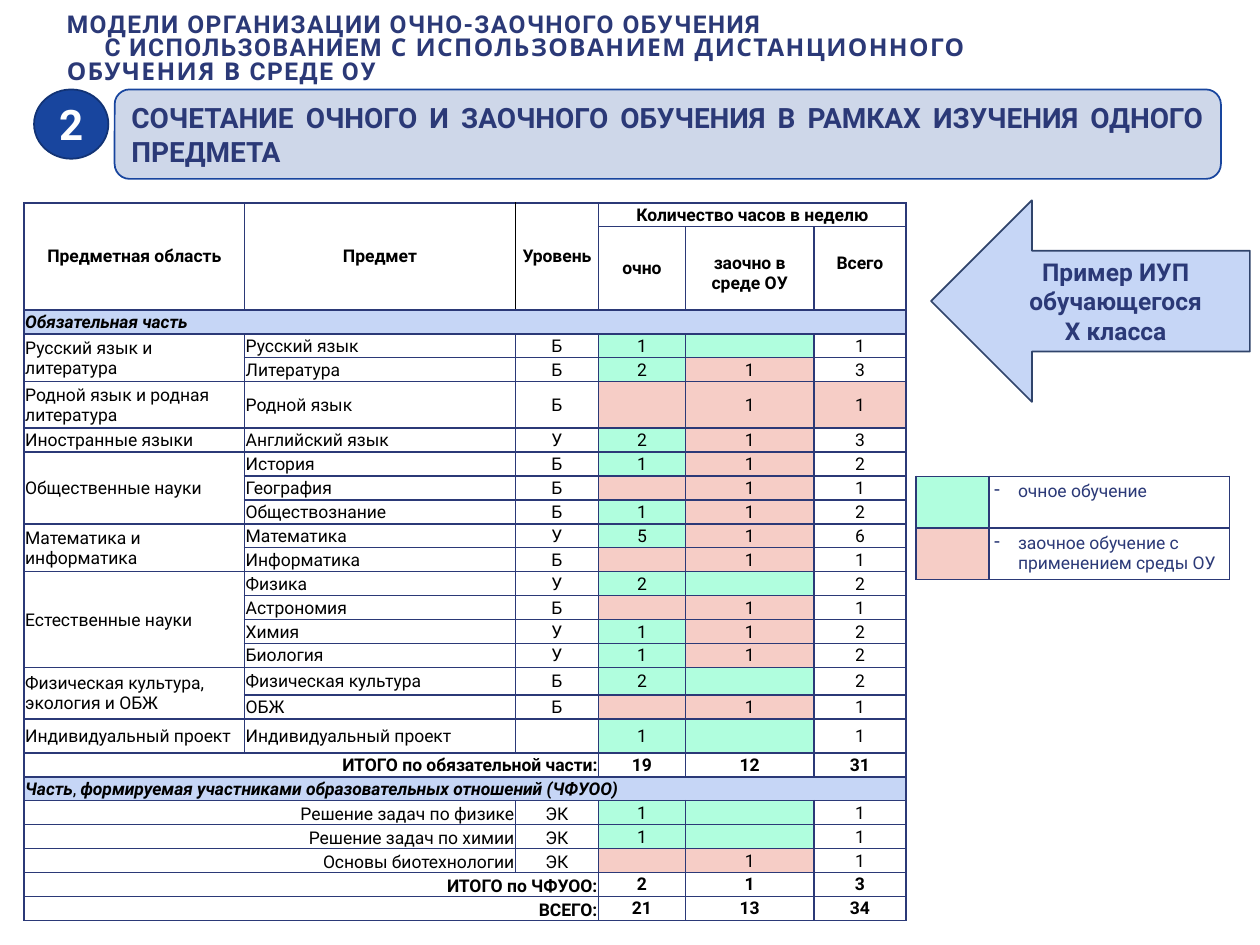
from lxml import etree
from pptx import Presentation
from pptx.dml.color import RGBColor
from pptx.enum.shapes import MSO_SHAPE
from pptx.enum.text import MSO_ANCHOR, PP_ALIGN
from pptx.oxml.ns import qn
from pptx.util import Inches, Pt

LEFT, CENTER, RIGHT = PP_ALIGN.LEFT, PP_ALIGN.CENTER, PP_ALIGN.RIGHT
JUSTIFY = PP_ALIGN.JUSTIFY
TOP, MIDDLE, BOTTOM = MSO_ANCHOR.TOP, MSO_ANCHOR.MIDDLE, MSO_ANCHOR.BOTTOM
NAVY, BLACK, WHITE = "2B3977", "000000", "FFFFFF"
IN_PERSON, DISTANCE, PALE_BLUE = "B0FEDE", "F6CDC6", "C6D6F6"
rgb = RGBColor.from_string


def style(frame, size, color, bold=True, italic=False, align=LEFT):
    for paragraph in frame.paragraphs:
        paragraph.alignment = align
        for run in paragraph.runs:
            run.font.name = "Roboto"
            run.font.size = Pt(size)
            run.font.bold = bold
            run.font.italic = italic
            run.font.color.rgb = rgb(color)


def prepare(grid):
    """Give a new table plain cells with thin borders and tight margins."""
    grid.first_row = grid.horz_banding = False
    for cell in grid.iter_cells():
        cell.margin_left = cell.margin_right = cell.margin_top = Inches(0.01)
        cell.margin_bottom = 0
        cell.vertical_anchor = MIDDLE
        for side in ("lnL", "lnR", "lnT", "lnB"):
            line = etree.SubElement(cell._tc.get_or_add_tcPr(), qn(f"a:{side}"), w="12700")
            fill = etree.SubElement(line, qn("a:solidFill"))
            etree.SubElement(fill, qn("a:srgbClr"), val=NAVY)
        cell.fill.background()
        # Keeps empty cells from stretching their row
        etree.SubElement(cell.text_frame.paragraphs[0]._p, qn("a:endParaRPr"), sz="1000")


prs = Presentation()
prs.slide_width, prs.slide_height = Inches(10), Inches(7.5)
slide = prs.slides.add_slide(prs.slide_layouts[5])
shapes = slide.shapes

# Title
title = shapes.title
title.left, title.top, title.width, title.height = Inches(0.43), 0, Inches(7.39), Inches(0.79)
heading = title.text_frame
heading.vertical_anchor = MIDDLE
heading.text = "МОДЕЛИ ОРГАНИЗАЦИИ ОЧНО-ЗАОЧНОГО ОБУЧЕНИЯ"
subject_line = heading.add_paragraph()
for part in ("С ИСПОЛЬЗОВАНИЕМ ", "С ИСПОЛЬЗОВАНИЕМ ДИСТАНЦИОННОГО ОБУЧЕНИЯ В ", "СРЕДЕ ОУ"):
    subject_line.add_run().text = part
style(heading, 14, NAVY)
subject_line.runs[1].font.name = "Open Sans"
subject_line._p.get_or_add_pPr().set("indent", str(Inches(0.3)))
for paragraph in heading.paragraphs:
    paragraph.line_spacing = 0.8
    paragraph.space_before = Pt(0)
    for run in paragraph.runs:
        run._r.get_or_add_rPr().set("spc", "80")

# Numbered banner and arrow
banner = shapes.add_group_shape().shapes
callouts = [
    (banner, MSO_SHAPE.OVAL, (0.27, 0.71, 0.59, 0.55), "18459E", "123375",
     "2", 24, WHITE, CENTER),
    (banner, MSO_SHAPE.ROUNDED_RECTANGLE, (0.91, 0.71, 8.78, 0.71), "CED7E9", "18459E",
     "СОЧЕТАНИЕ ОЧНОГО И ЗАОЧНОГО ОБУЧЕНИЯ В РАМКАХ ИЗУЧЕНИЯ ОДНОГО ПРЕДМЕТА",
     16, NAVY, JUSTIFY),
    (shapes, MSO_SHAPE.LEFT_ARROW, (7.39, 1.59, 2.53, 1.6), PALE_BLUE, "30446B",
     "Пример ИУП обучающегося\nХ класса", 14, NAVY, CENTER),
]
for parent, kind, box, fill, outline, text, size, color, align in callouts:
    callout = parent.add_shape(kind, *map(Inches, box))
    callout.shadow.inherit = False
    callout.fill.solid()
    callout.fill.fore_color.rgb = rgb(fill)
    callout.line.color.rgb = rgb(outline)
    callout.line.width = Pt(1)
    callout.text_frame.word_wrap = True
    callout.text_frame.text = text
    style(callout.text_frame, size, color, align=align)

# Curriculum: area (None continues the one above), subject, level, hours in person, hours at a distance
required = [
    ("Русский язык и литература", "Русский язык", "Б", 1, 0),
    (None, "Литература", "Б", 2, 1),
    ("Родной язык и родная литература", "Родной язык", "Б", 0, 1),
    ("Иностранные языки", "Английский язык", "У", 2, 1),
    ("Общественные науки", "История", "Б", 1, 1),
    (None, "География", "Б", 0, 1),
    (None, "Обществознание", "Б", 1, 1),
    ("Математика и информатика", "Математика", "У", 5, 1),
    (None, "Информатика", "Б", 0, 1),
    ("Естественные науки", "Физика", "У", 2, 0),
    (None, "Астрономия", "Б", 0, 1),
    (None, "Химия", "У", 1, 1),
    (None, "Биология", "У", 1, 1),
    ("Физическая культура, экология и ОБЖ", "Физическая культура", "Б", 2, 0),
    (None, "ОБЖ", "Б", 0, 1),
    ("Индивидуальный проект", "Индивидуальный проект", "", 1, 0),
]
electives = [
    ("Решение задач по физике", "", "ЭК", 1, 0),
    ("Решение задач по химии", "", "ЭК", 1, 0),
    ("Основы биотехнологии", "", "ЭК", 0, 1),
]
FIRST_REQUIRED, REQUIRED_TOTAL, ELECTIVE_HEADING, FIRST_ELECTIVE = 3, 19, 20, 21
totals = [
    (REQUIRED_TOTAL, "ИТОГО по обязательной части:", 19, 12, MIDDLE),
    (24, "ИТОГО по ЧФУОО:", 2, 1, BOTTOM),
    (25, "ВСЕГО:", 21, 13, BOTTOM),
]

plan = shapes.add_table(26, 6, Inches(0.19), Inches(1.61), Inches(7), Inches(5.7)).table
prepare(plan)
for column, width in zip(plan.columns, (1.75, 2.15, 0.66, 0.69, 1.02, 0.73)):
    column.width = Inches(width)
special_heights = {1: 0.66, 5: 0.37, 16: 0.22, 18: 0.27}
for index, row in enumerate(plan.rows):
    row.height = Inches(special_heights.get(index, 0.19))

headers = [
    (0, 0, "Предметная область"), (0, 1, "Предмет"), (0, 2, "Уровень"),
    (0, 3, "Количество часов в неделю"),
    (1, 3, "очно"), (1, 4, "заочно в среде ОУ"), (1, 5, "Всего"),
]
for row, column, text in headers:
    cell = plan.cell(row, column)
    cell.text_frame.text = text
    style(cell.text_frame, 10, BLACK, align=CENTER)
    if column < 3:
        cell.merge(plan.cell(1, column))
plan.cell(0, 3).merge(plan.cell(0, 5))
for column in (4, 5):
    cell = plan.cell(1, column)
    cell.vertical_anchor = TOP
    cell.margin_top = Inches(0.21)
    cell.margin_left = cell.margin_right = Inches(0.1)
for column, side in ((1, "lnR"), (2, "lnL")):
    for row in (0, 1):
        border = plan.cell(row, column)._tc.tcPr.find(qn(f"a:{side}"))
        border.find(".//" + qn("a:srgbClr")).set("val", BLACK)

sections = [
    (2, ["Обязательная часть"]),
    (ELECTIVE_HEADING,
     ["Часть", ", ", "формируемая участниками образовательных отношений (ЧФУОО)"]),
]
for row, parts in sections:
    cell = plan.cell(row, 0)
    cell.merge(plan.cell(row, 5))
    cell.fill.solid()
    cell.fill.fore_color.rgb = rgb(PALE_BLUE)
    for part in parts:
        cell.text_frame.paragraphs[0].add_run().text = part
    style(cell.text_frame, 10, BLACK, italic=True)
comma = plan.cell(ELECTIVE_HEADING, 0).text_frame.paragraphs[0].runs[1]
comma.font.bold = comma.font.italic = False

for first_row, subjects in ((FIRST_REQUIRED, required), (FIRST_ELECTIVE, electives)):
    elective = subjects is electives
    for row, (area, subject, level, in_person, distance) in enumerate(subjects, first_row):
        values = (area, subject, level, in_person, distance, in_person + distance)
        for column, value in enumerate(values):
            cell = plan.cell(row, column)
            if value:
                cell.text_frame.text = str(value)
                align = CENTER if column > 1 else RIGHT if elective else LEFT
                style(cell.text_frame, 10, BLACK, bold=False, align=align)
            if elective and column < 3:
                cell.vertical_anchor = BOTTOM
        fills = [(3, IN_PERSON if in_person else DISTANCE),
                 (4, DISTANCE if distance else IN_PERSON)]
        if subject == "Родной язык":
            fills.append((5, DISTANCE))
        for column, color in fills:
            plan.cell(row, column).fill.solid()
            plan.cell(row, column).fill.fore_color.rgb = rgb(color)
        if elective:
            plan.cell(row, 0).merge(plan.cell(row, 1))

area_starts = [i for i, subject in enumerate(required) if subject[0]] + [len(required)]
for start, end in zip(area_starts, area_starts[1:]):
    if end - start > 1:
        plan.cell(FIRST_REQUIRED + start, 0).merge(plan.cell(FIRST_REQUIRED + end - 1, 0))

for row, label, in_person, distance, anchor in totals:
    values = ((0, label), (3, in_person), (4, distance), (5, in_person + distance))
    for column, value in values:
        cell = plan.cell(row, column)
        cell.text_frame.text = str(value)
        style(cell.text_frame, 10, BLACK, align=CENTER if column else RIGHT)
    plan.cell(row, 0).vertical_anchor = anchor
    plan.cell(row, 0).merge(plan.cell(row, 2))

# Legend
legend = shapes.add_table(2, 2, Inches(7.27), Inches(3.78), Inches(2.49), Inches(0.82)).table
prepare(legend)
legend.columns[0].width, legend.columns[1].width = Inches(0.58), Inches(1.91)
meanings = [(IN_PERSON, "очное обучение"), (DISTANCE, "заочное обучение с применением среды ОУ")]
for row, (color, meaning) in enumerate(meanings):
    swatch, label = legend.cell(row, 0), legend.cell(row, 1)
    swatch.fill.solid()
    swatch.fill.fore_color.rgb = rgb(color)
    label.margin_left = label.margin_right = label.margin_top = label.margin_bottom = Inches(0.04)
    label.vertical_anchor = TOP
    label.text_frame.text = meaning
    properties = label.text_frame.paragraphs[0]._p.get_or_add_pPr()
    properties.set("marL", str(Inches(0.19)))
    properties.set("indent", str(-Inches(0.19)))
    etree.SubElement(properties, qn("a:buChar"), char="-")
    style(label.text_frame, 10, NAVY, bold=False)

prs.save("out.pptx")
